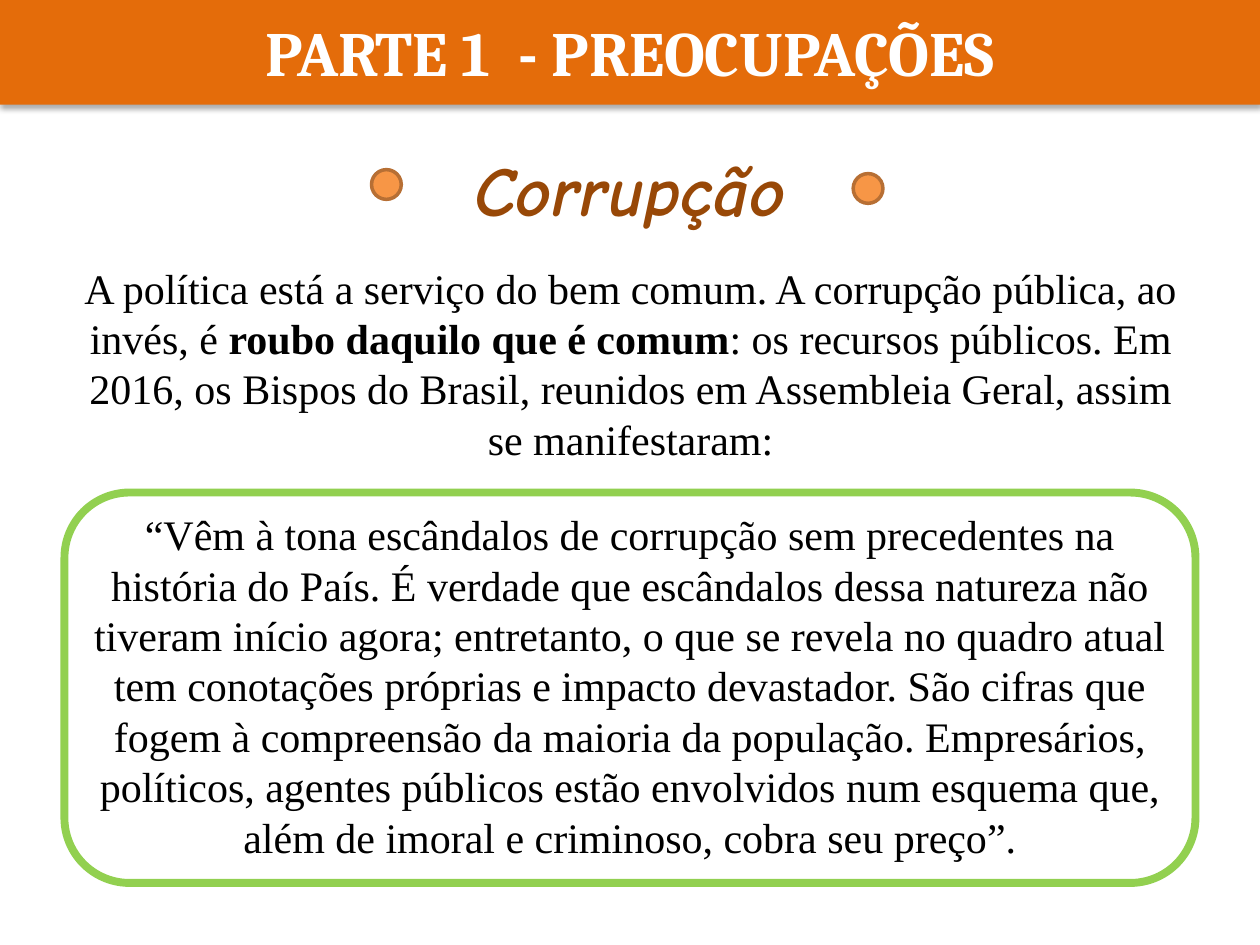
from dataclasses import dataclass

from lxml import etree
from pptx import Presentation
from pptx import util as u
from pptx.dml.color import RGBColor
from pptx.enum import shapes, text
from pptx.oxml.ns import qn


@dataclass(frozen=True)
class Theme:
    banner: str = "E46C0A"
    banner_text: str = "FFFFFF"
    heading: str = "984807"
    body: str = "000000"
    dot: str = "F79646"
    dot_line: str = "B76F34"
    frame: str = "92D050"
    banner_font: str = "Cambria"
    heading_font: str = "Comic Neue"
    body_font: str = "Times New Roman"
    banner_size: int = 36
    heading_size: int = 40
    body_size: int = 24


class SlideBuilder:
    def __init__(self, slide, theme):
        self.slide = slide
        self.theme = theme

    def shape(self, kind, box, fill=None, line=None, width=0):
        sp = self.slide.shapes.add_shape(kind, *map(u.Cm, box))
        sp.shadow.inherit = False
        if fill:
            sp.fill.solid()
            sp.fill.fore_color.rgb = RGBColor.from_string(fill)
        else:
            sp.fill.background()
        if line:
            sp.line.color.rgb = RGBColor.from_string(line)
            sp.line.width = u.Pt(width)
        else:
            sp.line.fill.background()
        return sp

    def banner(self, box):
        sp = self.shape(shapes.MSO_SHAPE.RECTANGLE, box, self.theme.banner)
        effects = sp._element.spPr.find(qn("a:effectLst"))
        shadow = etree.SubElement(
            effects, qn("a:outerShdw"), blurRad=str(u.Pt(3.5)),
            dist=str(u.Pt(2.2)), dir="5400000", rotWithShape="0")
        color = etree.SubElement(shadow, qn("a:srgbClr"), val="000000")
        etree.SubElement(color, qn("a:alpha"), val="32000")

    def dot(self, left, top, size=0.6):
        self.shape(shapes.MSO_SHAPE.OVAL, (left, top, size, size),
                   self.theme.dot, self.theme.dot_line, 2)

    def frame(self, box):
        self.shape(shapes.MSO_SHAPE.ROUNDED_RECTANGLE, box,
                   line=self.theme.frame, width=4.5)

    def text(self, box, runs, font, size, color, bold=None, italic=None):
        """Add a centred paragraph; runs are (wording, bold) pairs."""
        tf = self.slide.shapes.add_textbox(*map(u.Cm, box)).text_frame
        tf.word_wrap = True
        tf.auto_size = text.MSO_AUTO_SIZE.SHAPE_TO_FIT_TEXT
        p = tf.paragraphs[0]
        p.alignment = text.PP_ALIGN.CENTER
        p.font.name = font
        p.font.size = u.Pt(size)
        p.font.color.rgb = RGBColor.from_string(color)
        p.font.bold = bold
        p.font.italic = italic
        for wording, run_bold in runs:
            r = p.add_run()
            r.text = wording
            r.font.bold = run_bold

    def heading(self, box, wording):
        t = self.theme
        self.text(box, [(wording, None)], t.heading_font, t.heading_size,
                  t.heading, bold=True, italic=True)

    def banner_title(self, box, wording):
        t = self.theme
        self.text(box, [(wording, None)], t.banner_font, t.banner_size,
                  t.banner_text, bold=True)

    def body(self, box, *runs):
        t = self.theme
        self.text(box, runs, t.body_font, t.body_size, t.body)


def main():
    prs = Presentation()
    prs.slide_width, prs.slide_height = u.Cm(25.4), u.Cm(19.05)
    s = SlideBuilder(prs.slides.add_slide(prs.slide_layouts[6]), Theme())

    s.heading((5.4, 2.82, 14.6, 1.96), "Corrupção")
    s.banner((0, 0, 25.4, 2.11))
    s.banner_title((0, 0.15, 25.4, 1.8), "PARTE 1  - PREOCUPAÇÕES")
    s.dot(7.49, 3.42)
    s.dot(17.2, 3.5)
    s.body(
        (1.12, 5.16, 23.19, 4.37),
        ("A política está a serviço do bem comum. A corrupção pública, "
         "ao invés, é ", None),
        ("roubo daquilo que é comum", True),
        (": os recursos públicos. Em 2016, os Bispos do Brasil, reunidos "
         "em Assembleia Geral, assim se manifestaram:", None))
    s.body(
        (1.5, 10.13, 22.4, 7.44),
        ("“Vêm à tona escândalos de corrupção sem precedentes na história "
         "do País. É verdade que escândalos dessa natureza não tiveram "
         "início agora; entretanto, o que se revela no quadro atual tem "
         "conotações próprias e impacto devastador. São cifras que fogem à "
         "compreensão da maioria da população. Empresários, políticos, "
         "agentes públicos estão envolvidos num esquema que, além de imoral "
         "e criminoso, cobra seu preço”.", None))
    s.frame((1.3, 9.93, 22.8, 7.87))

    prs.save("out.pptx")


if __name__ == "__main__":
    main()
